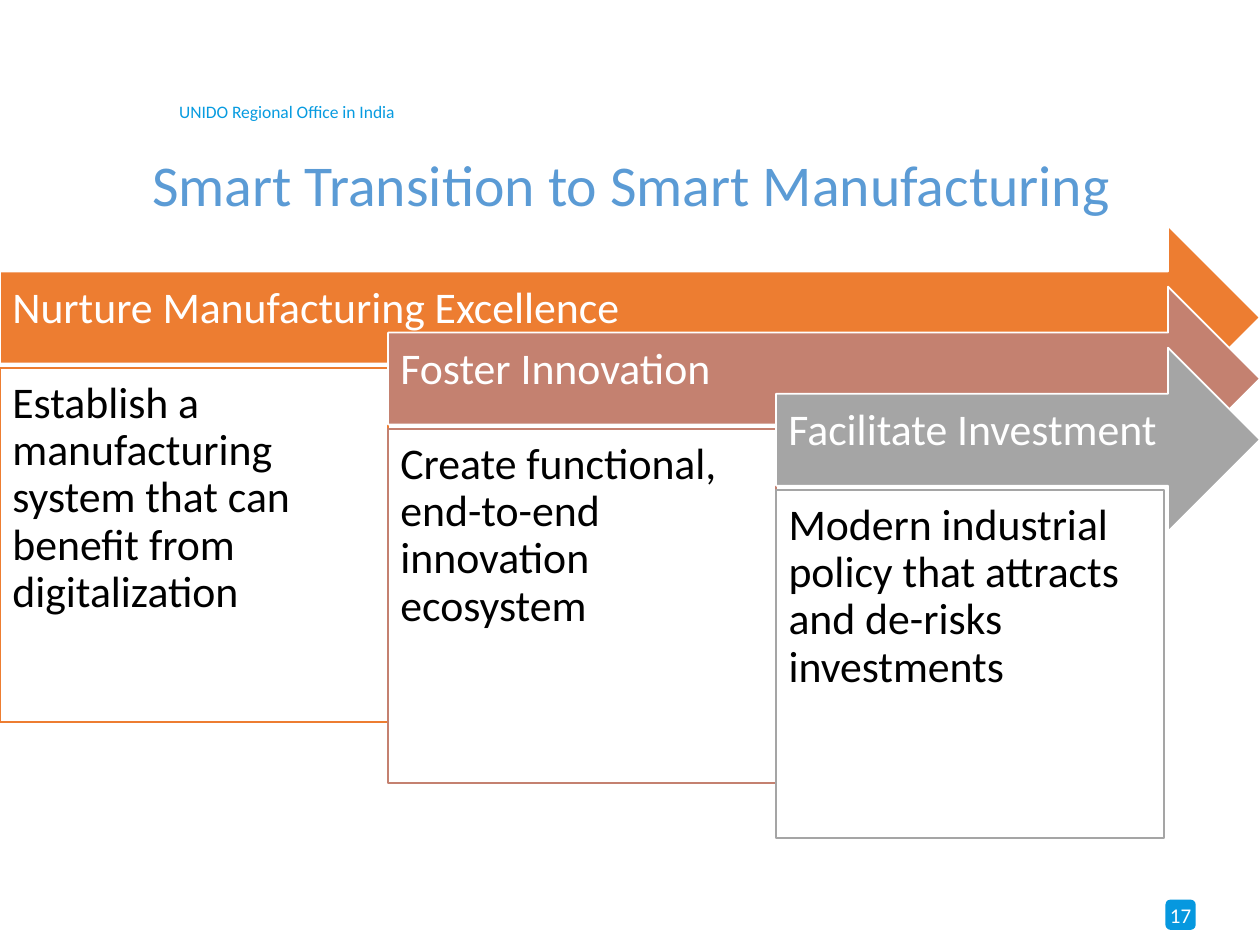
from pptx import Presentation
from pptx.dml.color import RGBColor
from pptx.enum.shapes import MSO_SHAPE
from pptx.enum.text import MSO_ANCHOR, PP_ALIGN
from pptx.util import Inches, Pt

COLORS = {
    "office": "079BE0", "badge": "0698DF", "title": "5B9BD5",
    "orange": "ED7D31", "rose": "C48170", "grey": "A5A5A5",
    "white": "FFFFFF", "black": "000000",
}
WIDTH, HEIGHT = 10, 7.5
COLUMN = 0.308 * WIDTH      # each stage starts one column further right
STEP = 0.485                # and one step lower
ARROW_TOP, ARROW_HEIGHT = 1.79, 1.46
PANEL_TOP = 2.92

STAGES = [
    ("Nurture Manufacturing Excellence",
     "Establish a manufacturing system that can benefit from digitalization",
     "orange", 2.81),
    ("Foster Innovation",
     "Create functional, end-to-end innovation ecosystem",
     "rose", 2.81),
    ("Facilitate Investment",
     "Modern industrial policy that attracts and de-risks investments",
     "grey", 2.76),
]


def write(shape, text, size, color, align, anchor, insets, spacing=1.0, wrap=True):
    frame = shape.text_frame
    frame.word_wrap = wrap
    frame.vertical_anchor = anchor
    (frame.margin_left, frame.margin_top,
     frame.margin_right, frame.margin_bottom) = [Inches(i) for i in insets]
    paragraph = frame.paragraphs[0]
    paragraph.alignment = align
    paragraph.line_spacing = spacing
    run = paragraph.add_run()
    run.text = text
    run.font.name = "Calibri"
    run.font.size = Pt(size)
    run.font.color.rgb = RGBColor.from_string(COLORS[color])


def add_block(kind, left, top, width, height, fill, line=None):
    block = slide.shapes.add_shape(
        kind, Inches(left), Inches(top), Inches(width), Inches(height))
    block.shadow.inherit = False
    block.fill.solid()
    block.fill.fore_color.rgb = RGBColor.from_string(COLORS[fill])
    if line:
        block.line.color.rgb = RGBColor.from_string(COLORS[line])
        block.line.width = Pt(1)
    else:
        block.line.fill.background()
    return block


presentation = Presentation()
presentation.slide_width, presentation.slide_height = Inches(WIDTH), Inches(HEIGHT)
slide = presentation.slides.add_slide(presentation.slide_layouts[5])

# Office name and page number
office = slide.shapes.add_textbox(Inches(1.3), Inches(0.75), Inches(1.93), Inches(0.27))
write(office, "UNIDO Regional Office in India", 10, "office", PP_ALIGN.RIGHT,
      MSO_ANCHOR.TOP, (0.1, 0.05, 0.1, 0.05), wrap=False)
page_number = add_block(MSO_SHAPE.ROUNDED_RECTANGLE, 9.25, 7.14, 0.24, 0.24, "badge")
write(page_number, "17", 12, "white", PP_ALIGN.CENTER, MSO_ANCHOR.MIDDLE,
      (0, 0, 0, 0), wrap=False)

# Title
title = slide.shapes.title
title.left, title.top = Inches(0.69), Inches(1.05)
title.width, title.height = Inches(8.64), Inches(0.88)
write(title, "Smart Transition to Smart Manufacturing", 33, "title", PP_ALIGN.CENTER,
      MSO_ANCHOR.MIDDLE, (0.1, 0.05, 0.1, 0.05), 0.9)

# Stages: an arrow running to the right edge, with a panel below its tail
for index, (heading, description, color, panel_height) in enumerate(STAGES):
    left, drop = index * COLUMN, index * STEP
    arrow = add_block(MSO_SHAPE.RIGHT_ARROW, left, ARROW_TOP + drop,
                      WIDTH - left, ARROW_HEIGHT, color, "white")
    write(arrow, heading, 25, "white", PP_ALIGN.LEFT, MSO_ANCHOR.MIDDLE,
          (0.1, 0.1, 0.28, 0.23), 0.9)
    panel = add_block(MSO_SHAPE.RECTANGLE, left, PANEL_TOP + drop,
                      COLUMN, panel_height, "white", color)
    write(panel, description, 25, "black", PP_ALIGN.LEFT, MSO_ANCHOR.TOP,
          (0.1, 0.1, 0.1, 0.1), 0.9)

presentation.save("out.pptx")
